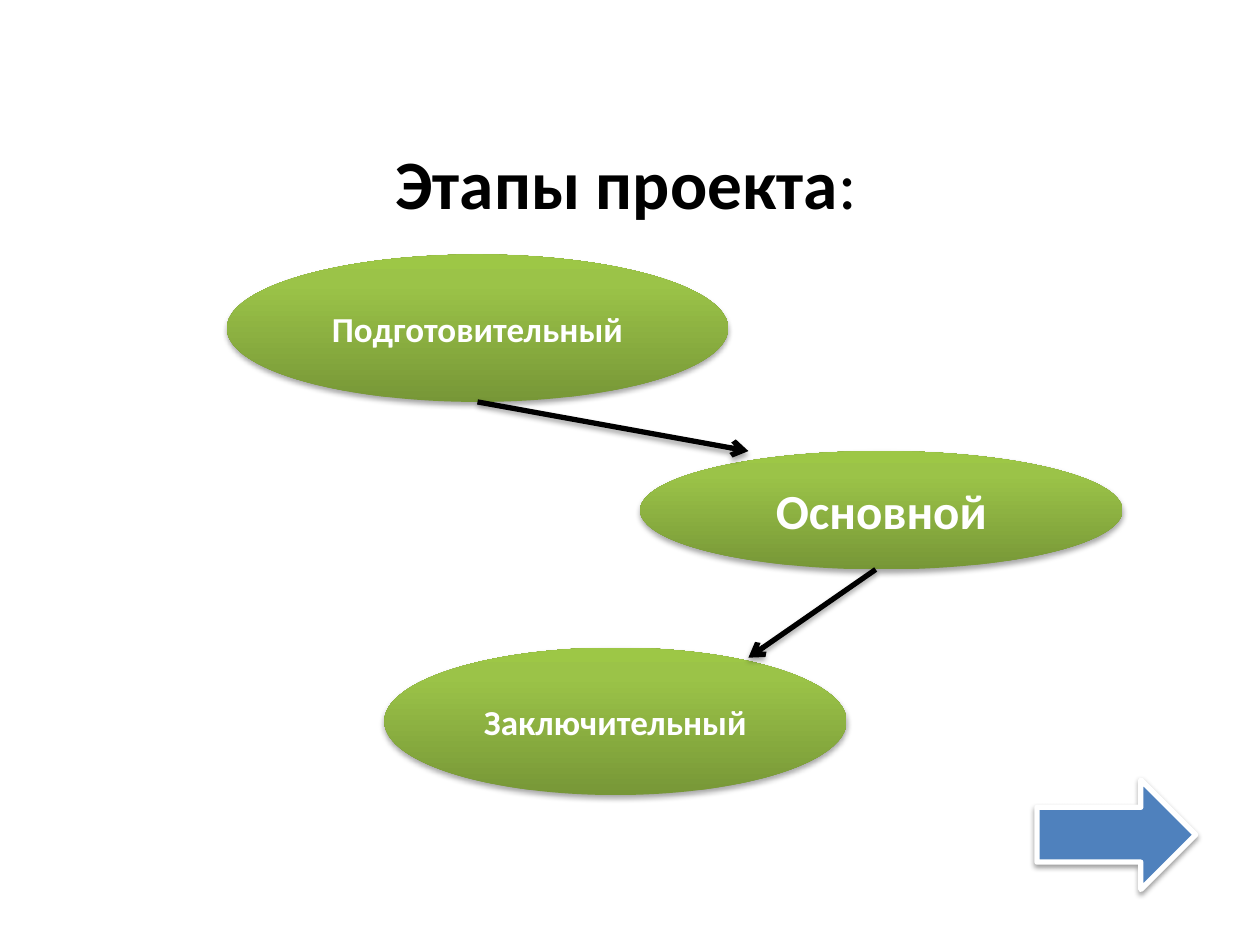
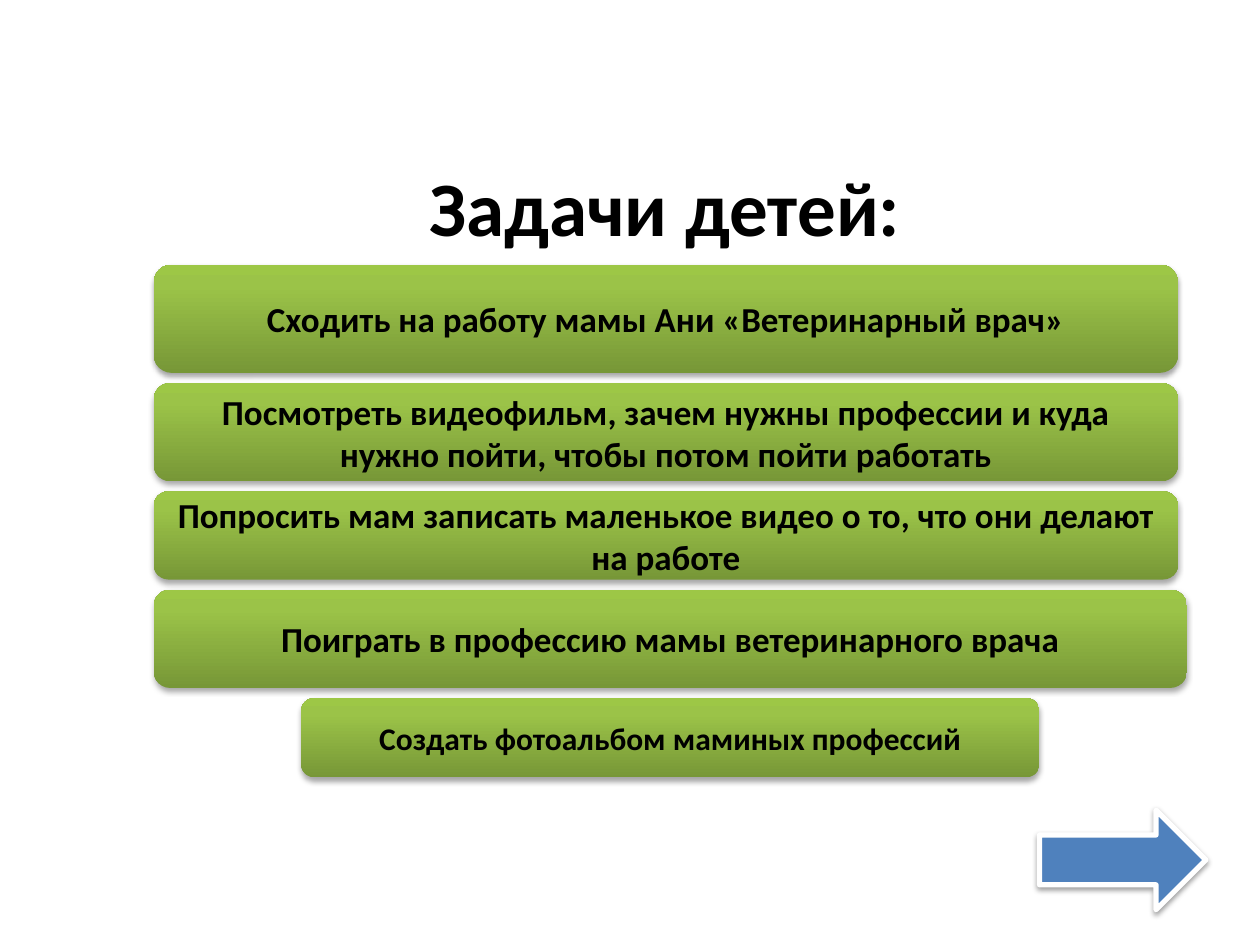
from copy import deepcopy

from lxml import etree
from pptx import Presentation
from pptx.dml.color import RGBColor
from pptx.enum.shapes import MSO_CONNECTOR, MSO_SHAPE
from pptx.enum.text import MSO_ANCHOR, PP_ALIGN
from pptx.oxml.ns import qn
from pptx.util import Emu, Pt

ELLIPSE = MSO_SHAPE.OVAL
ROUNDED = MSO_SHAPE.ROUNDED_RECTANGLE
RIGHT_ARROW = MSO_SHAPE.RIGHT_ARROW
STRAIGHT = MSO_CONNECTOR.STRAIGHT
MIDDLE = MSO_ANCHOR.MIDDLE
CENTER = PP_ALIGN.CENTER

PX = 9144
BLACK = RGBColor(0x00, 0x00, 0x00)
WHITE = RGBColor(0xFF, 0xFF, 0xFF)
BLUE = RGBColor(0x4F, 0x81, 0xBD)
GREEN_STOPS = [
    (0, RGBColor(0x77, 0x97, 0x37)),
    (0.8, RGBColor(0x9B, 0xC3, 0x48)),
    (1, RGBColor(0x9D, 0xC7, 0x46)),
]
FONT = "Calibri"
LINE_WIDTH = Pt(3)
ROW_LEFT, ROW_TOP, ROW_GAP = 122, 210, 8

STAGES = [
    ("Подготовительный", 20, (180, 202, 398, 117)),
    ("Основной", 28, (508, 358, 383, 94)),
    ("Заключительный", 20, (305, 514, 367, 117)),
]
STAGE_LINKS = [(379, 319, 594, 358), (695, 452, 594, 522)]
TASKS = [
    ("Сходить на работу мамы Ани «Ветеринарный врач»", 20, ROW_LEFT, 813, 86),
    ("Посмотреть видеофильм, зачем нужны профессии и куда нужно пойти, "
     "чтобы потом пойти работать", 20, ROW_LEFT, 813, 78),
    ("Попросить мам записать маленькое видео о то, что они делают на работе",
     20, ROW_LEFT, 813, 70),
    ("Поиграть в профессию мамы ветеринарного врача", 20, ROW_LEFT, 820, 78),
    ("Создать фотоальбом маминых профессий", 18, 239, 586, 63),
]


def scaled(lengths):
    return [Emu(length * PX) for length in lengths]


def set_attributes(target, values):
    for name, value in values.items():
        setattr(target, name, value)


def write_text(box, spans, size, color):
    frame = box.text_frame
    set_attributes(frame, {"word_wrap": True, "vertical_anchor": MIDDLE})
    para = frame.paragraphs[0]
    para.alignment = CENTER
    for text, bold in spans:
        span = para.add_run()
        span.text = text
        set_attributes(span.font, {"name": FONT, "size": Pt(size), "bold": bold})
        span.font.color.rgb = color


def add_shadow(item, opacity, distance):
    properties = item._element.spPr
    effects = properties.find(qn("a:effectLst"))
    if effects is None:
        effects = etree.SubElement(properties, qn("a:effectLst"))
    shadow = etree.SubElement(
        effects, qn("a:outerShdw"), blurRad="40000", dist=str(distance),
        dir="5400000", rotWithShape="0")
    color = etree.SubElement(shadow, qn("a:srgbClr"), val=str(BLACK))
    etree.SubElement(color, qn("a:alpha"), val=str(opacity * 1000))


def add_title(page, bounds, spans, size):
    box = page.shapes.add_textbox(*scaled(bounds))
    write_text(box, spans, size, BLACK)


def add_green_shape(page, kind, bounds, text, size, color):
    shape = page.shapes.add_shape(kind, *scaled(bounds))
    shape.shadow.inherit = False
    shape.fill.gradient()
    shape.fill.gradient_angle = 90
    stop_list = next(shape._element.spPr.iter(qn("a:gsLst")))
    stop_list.append(deepcopy(stop_list[-1]))
    for stop, (position, stop_color) in zip(shape.fill.gradient_stops, GREEN_STOPS):
        stop.position = position
        stop.color.rgb = stop_color
    shape.line.fill.background()
    add_shadow(shape, 35, 23000)
    write_text(shape, [(text, True)], size, color)


def add_link(page, ends):
    link = page.shapes.add_connector(STRAIGHT, *scaled(ends))
    link.line.color.rgb = BLACK
    link.line.width = LINE_WIDTH
    etree.SubElement(link.line._get_or_add_ln(), qn("a:tailEnd"), type="arrow")
    add_shadow(link, 35, 23000)


def add_next_arrow(page, bounds):
    arrow = page.shapes.add_shape(RIGHT_ARROW, *scaled(bounds))
    arrow.shadow.inherit = False
    arrow.fill.solid()
    arrow.fill.fore_color.rgb = BLUE
    arrow.line.color.rgb = WHITE
    arrow.line.width = LINE_WIDTH
    add_shadow(arrow, 38, 20000)


def build_stages(page):
    add_title(page, (47, 109, 900, 70), [("Этапы проекта", True), (":", False)], 39.6)
    for text, size, bounds in STAGES:
        add_green_shape(page, ELLIPSE, bounds, text, size, WHITE)
    for ends in STAGE_LINKS:
        add_link(page, ends)
    add_next_arrow(page, (823, 619, 126, 87))


def build_tasks(page):
    add_title(page, (78, 116, 900, 94), [("Задачи детей:", True)], 44)
    top = ROW_TOP
    for text, size, left, width, height in TASKS:
        add_green_shape(page, ROUNDED, (left, top, width, height), text, size, BLACK)
        top += height + ROW_GAP
    add_next_arrow(page, (825, 643, 132, 79))


def main():
    deck = Presentation()
    deck.slide_width, deck.slide_height = scaled((1000, 750))
    blank = deck.slide_layouts[6]
    for build in (build_stages, build_tasks):
        build(deck.slides.add_slide(blank))
    deck.save("out.pptx")


if __name__ == "__main__":
    main()
